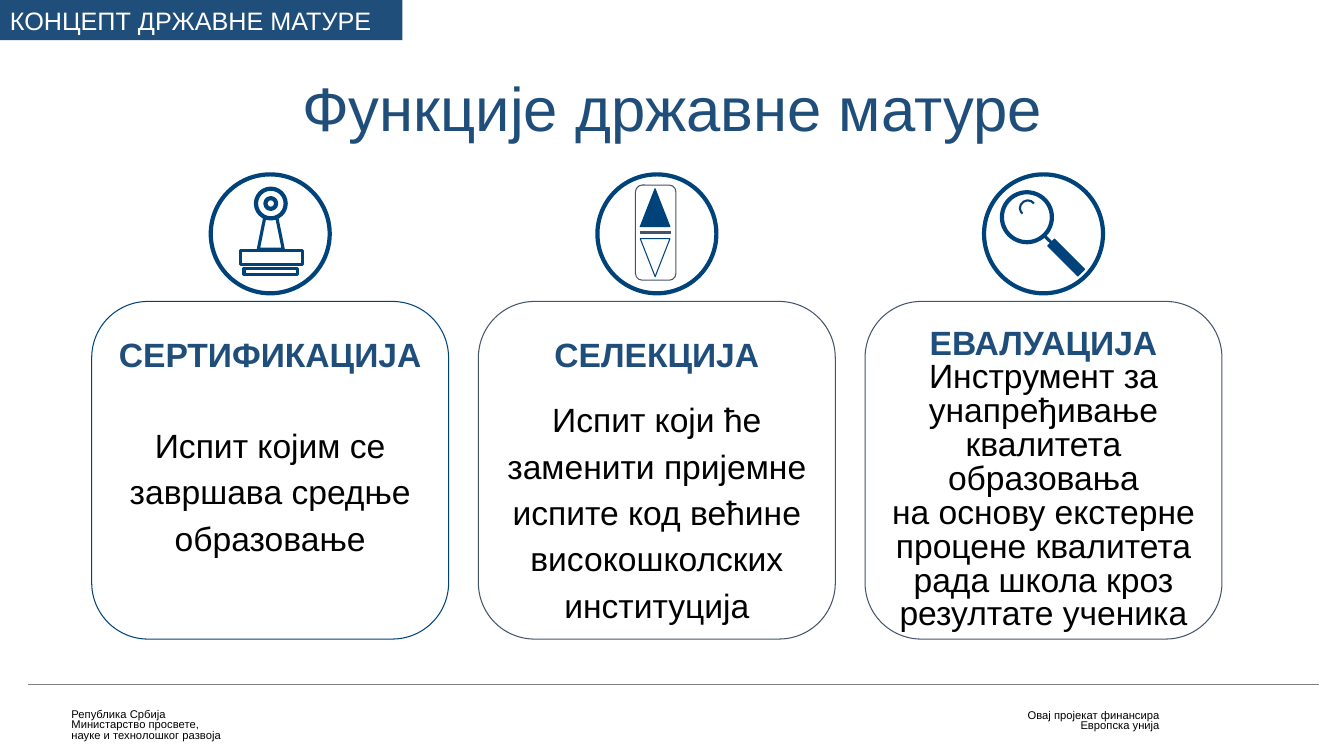
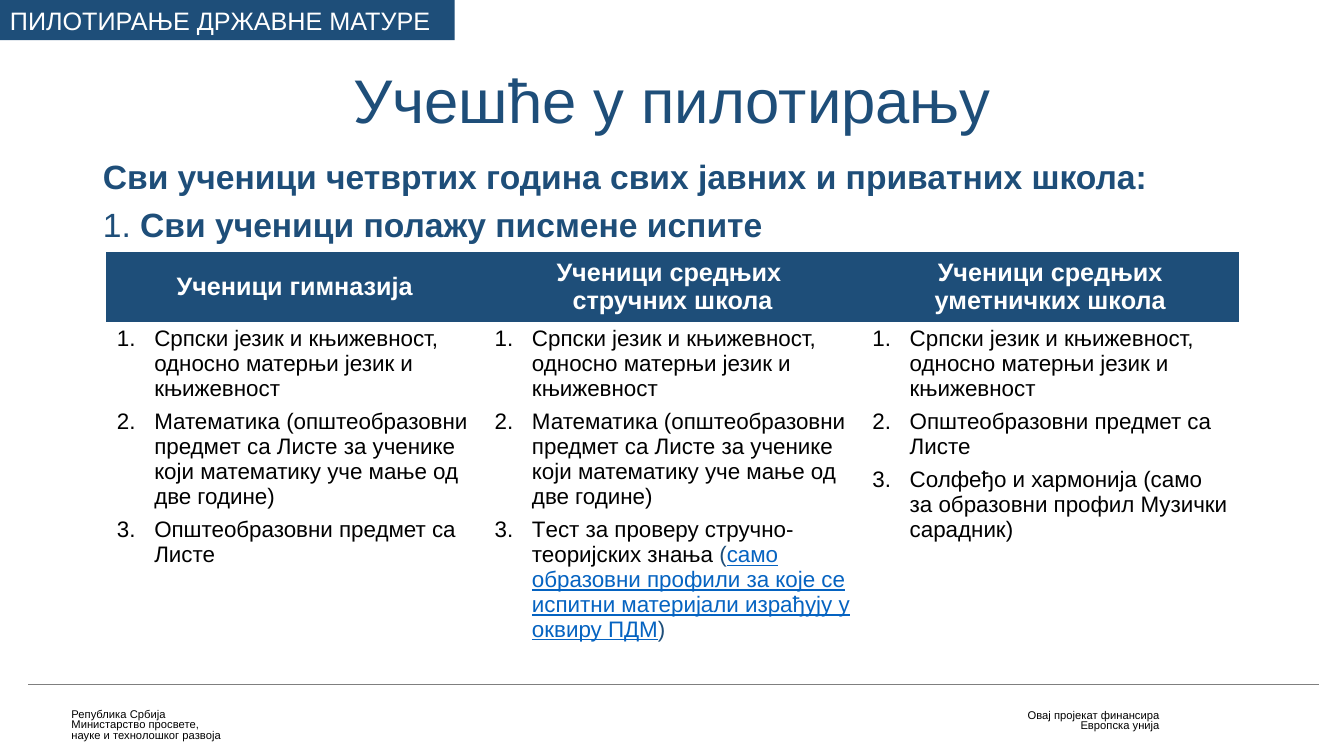
from pptx import Presentation
from pptx.dml.color import RGBColor
from pptx.enum.shapes import MSO_CONNECTOR, MSO_SHAPE
from pptx.enum.text import MSO_ANCHOR, MSO_AUTO_SIZE, PP_ALIGN
from pptx.oxml.ns import qn
from pptx.util import Inches, Pt
from lxml.etree import SubElement

# Shared style
NAVY = RGBColor(0x1E, 0x4E, 0x79)
ICON = RGBColor(0x00, 0x43, 0x7A)
SLATE = RGBColor(0x44, 0x54, 0x6A)
GRAY = RGBColor(0x7F, 0x7F, 0x7F)
LINK = RGBColor(0x05, 0x63, 0xC1)
BLACK = RGBColor(0, 0, 0)
WHITE = RGBColor(255, 255, 255)
FONT = "Arial"
NO_TABLE_STYLE = "{2D5ABB26-0587-4C30-8999-92F81FD0307C}"
TITLE_BOX = (0.92, 0.53, 11.5, 1.16)

# Grid of the three cards
CARD_X, CARD_Y, CARD_W, CARD_H, CARD_STEP = 0.91, 2.99, 3.54, 3.35, 3.835
ICON_Y, ICON_D = 1.73, 1.18


def place(sp, box):
    sp.left, sp.top, sp.width, sp.height = map(Inches, box)


def add_run(p, text, size, color=BLACK, bold=False, underline=False):
    r = p.add_run()
    r.text = text
    f = r.font
    f.name, f.size, f.bold = FONT, Pt(size), bold
    f.color.rgb = color
    if underline:
        f.underline = True


def next_par(tf, first, align=PP_ALIGN.LEFT, spacing=1.0, before=0):
    p = tf.paragraphs[0] if first else tf.add_paragraph()
    p.alignment, p.line_spacing, p.space_before = align, spacing, Pt(before)
    return p


def add_shape(shapes, kind, box, fill=None, line=None, width=0.75, rot=0):
    sp = shapes.add_shape(kind, *map(Inches, box))
    sp.shadow.inherit = False
    sp.rotation = rot
    if fill is None:
        sp.fill.background()
    else:
        sp.fill.solid()
        sp.fill.fore_color.rgb = fill
    if line is None:
        sp.line.fill.background()
    else:
        sp.line.color.rgb, sp.line.width = line, Pt(width)
    return sp


def add_line(shapes, start, end, color, width):
    ln = shapes.add_connector(MSO_CONNECTOR.STRAIGHT, *map(Inches, start + end))
    ln.line.color.rgb, ln.line.width = color, Pt(width)
    SubElement(ln.element.spPr, qn("a:effectLst"))
    return ln


# Master: title place, footer texts and rule
def footer_text(s, box, lines, align):
    sp = s.shapes.add_textbox(*map(Inches, box))
    sp.text_frame.word_wrap = True
    for i, text in enumerate(lines):
        add_run(next_par(sp.text_frame, i == 0, align, 0.8), text, 8)
    return sp


def build_master(prs, s):
    master = prs.slide_master
    for sp in list(master.placeholders)[2:]:
        sp.element.getparent().remove(sp.element)
    title = master.placeholders[0]
    place(title, TITLE_BOX)
    tree = title.element.getparent()
    parts = (
        footer_text(s, (10.09, 7, 1.51, 0.31),
                    ("Овај пројекат финансира", "Европска унија"), PP_ALIGN.RIGHT),
        footer_text(s, (0.61, 6.99, 1.69, 0.42),
                    ("Република Србија", "Министарство просвете,",
                     "науке и технолошког развоја"), PP_ALIGN.LEFT),
        add_line(s.shapes, (0.28, 6.79), (13.08, 6.79), GRAY, 1),
    )
    for i, sp in enumerate(parts, 20):
        sp.element.xpath(".//p:cNvPr")[0].set("id", str(i))
        tree.append(sp.element)


# Title and section tag of every slide
def heading(s, title, tag, tag_w, box=TITLE_BOX):
    sp = s.shapes.title
    place(sp, box)
    tf = sp.text_frame
    tf.auto_size, tf.vertical_anchor = MSO_AUTO_SIZE.NONE, MSO_ANCHOR.MIDDLE
    add_run(next_par(tf, True, PP_ALIGN.CENTER, 0.9), title, 44, NAVY)
    sp = add_shape(s.shapes, MSO_SHAPE.RECTANGLE, (0, 0, tag_w, 0.4), NAVY)
    sp.text_frame.vertical_anchor = MSO_ANCHOR.TOP
    add_run(next_par(sp.text_frame, True), tag, 18, WHITE)


# Icons: parts are given as shares of the circle's box
def scaled(x, y, shares):
    fx, fy, fw, fh = (v * ICON_D for v in shares)
    return x + fx, y + fy, fw, fh


def stamp(shapes, x, y):
    for kind, shares, fill, width in (
        (MSO_SHAPE.RECTANGLE, (0.25, 0.64, 0.52, 0.12), WHITE, 2.25),
        (MSO_SHAPE.RECTANGLE, (0.28, 0.79, 0.45, 0.05), WHITE, 2.25),
        (MSO_SHAPE.TRAPEZOID, (0.4, 0.37, 0.21, 0.26), WHITE, 2.25),
        (MSO_SHAPE.OVAL, (0.38, 0.12, 0.25, 0.25), None, 3),
        (MSO_SHAPE.OVAL, (0.46, 0.2, 0.09, 0.09), None, 3),
    ):
        add_shape(shapes, kind, scaled(x, y, shares), fill, ICON, width)


def compass(shapes, x, y):
    add_shape(shapes, MSO_SHAPE.ROUNDED_RECTANGLE,
              scaled(x, y, (0.32, 0.09, 0.34, 0.8)), WHITE, SLATE)
    for top, fill, rot in ((0.12, ICON, 0), (0.54, None, 180)):
        add_shape(shapes, MSO_SHAPE.ISOSCELES_TRIANGLE,
                  scaled(x, y, (0.36, top, 0.25, 0.32)), fill, ICON, rot=rot)
    left, mid, w, _ = scaled(x, y, (0.36, 0.49, 0.26, 0))
    add_line(shapes, (left, mid), (left + w, mid), SLATE, 2.25)


def magnifier(shapes, x, y):
    add_shape(shapes, MSO_SHAPE.OVAL, scaled(x, y, (0.15, 0.15, 0.42, 0.42)),
              None, ICON, 3)
    left, top, w, h = scaled(x, y, (0.5, 0.51, 0.32, 0.31))
    add_line(shapes, (left, top), (left + w, top + h), ICON, 2.25)
    add_shape(shapes, MSO_SHAPE.RECTANGLE, scaled(x, y, (0.51, 0.66, 0.36, 0.08)),
              ICON, ICON, rot=45)
    glint = add_shape(shapes, MSO_SHAPE.ARC, scaled(x, y, (0.3, 0.22, 0.13, 0.12)),
                      None, ICON, 1.5, 327.4)
    glint.adjustments[0], glint.adjustments[1] = 97.2, 0


# One card with its icon above
def card(s, x, name, lines, icon, line, spacing, gap):
    sp = add_shape(s.shapes, MSO_SHAPE.ROUNDED_RECTANGLE,
                   (x, CARD_Y, CARD_W, CARD_H), None, line)
    tf = sp.text_frame
    tf.vertical_anchor = MSO_ANCHOR.TOP
    tf.margin_top = tf.margin_bottom = Inches(0.1)
    add_run(next_par(tf, True, PP_ALIGN.CENTER, spacing), name, 24, NAVY, True)
    p = next_par(tf, False, PP_ALIGN.CENTER, spacing, gap)
    for i, text in enumerate(lines):
        if i:
            p.add_line_break()
        add_run(p, text, 24)
    shapes = s.shapes.add_group_shape().shapes
    x += (CARD_W - ICON_D) / 2
    add_shape(shapes, MSO_SHAPE.OVAL, (x, ICON_Y, ICON_D, ICON_D), None, ICON, 3)
    icon(shapes, x, ICON_Y)


def functions_slide(s):
    heading(s, "Функције државне матуре", "КОНЦЕПТ ДРЖАВНЕ МАТУРЕ", 3.99)
    cards = (
        ("СЕРТИФИКАЦИЈА", ["Испит којим се завршава средње образовање"],
         stamp, ICON, 1.15, 31.7),
        ("СЕЛЕКЦИЈА", ["Испит који ће заменити пријемне испите код већине "
                       "високошколских институција"], compass, SLATE, 1.15, 13.5),
        ("ЕВАЛУАЦИЈА", ["Инструмент за унапређивање квалитета образовања",
                        "на основу екстерне процене квалитета рада школа кроз "
                        "резултате ученика"], magnifier, SLATE, 0.84, 0),
    )
    for i, parts in enumerate(cards):
        card(s, CARD_X + i * CARD_STEP, *parts)


# Intro lines and table of exams
def intro(s, box):
    sp = s.placeholders[1]
    place(sp, box)
    tf = sp.text_frame
    tf.auto_size = MSO_AUTO_SIZE.NONE
    lines = (
        [("Сви ученици четвртих година свих јавних и приватних школа:", True)],
        [("1. ", False), ("Сви ученици полажу писмене испите", True)],
    )
    for i, runs in enumerate(lines):
        p = next_par(tf, i == 0, spacing=1.15, before=i)
        pPr = p._p.get_or_add_pPr()
        pPr.set("marL", "0")
        pPr.set("indent", "0")
        SubElement(pPr, qn("a:buNone"))
        for text, bold in runs:
            add_run(p, text, 24, NAVY, bold)


def numbered(p):
    p.space_after = Pt(6)
    pPr = p._p.get_or_add_pPr()
    pPr.set("marL", str(Inches(0.38)))
    pPr.set("indent", str(Inches(-0.37)))
    SubElement(SubElement(pPr, qn("a:buClr")), qn("a:srgbClr"), val=str(BLACK))
    SubElement(pPr, qn("a:buFont"), typeface=FONT)
    SubElement(pPr, qn("a:buAutoNum"), type="arabicPeriod")


def exam_table(s, box, columns):
    tbl_frame = s.shapes.add_table(2, len(columns), *map(Inches, box))
    tbl = tbl_frame.table
    tbl._tbl.tblPr.find(qn("a:tableStyleId")).text = NO_TABLE_STYLE
    tbl.rows[0].height, tbl.rows[1].height = Inches(0.69), Inches(box[3] - 0.69)
    for col, (head, items) in enumerate(columns):
        cell = tbl.cell(0, col)
        cell.fill.solid()
        cell.fill.fore_color.rgb = NAVY
        cell.vertical_anchor = MSO_ANCHOR.MIDDLE
        p = next_par(cell.text_frame, True, PP_ALIGN.CENTER)
        for i, text in enumerate(head):
            if i:
                p.add_line_break()
            add_run(p, text, 18, WHITE, True)
        cell = tbl.cell(1, col)
        cell.fill.background()
        for i, runs in enumerate(items):
            p = next_par(cell.text_frame, i == 0)
            numbered(p)
            for run in runs:
                add_run(p, run[0], 16, *run[1:])


def pilot_slide(s):
    heading(s, "Учешће у пилотирању", "ПИЛОТИРАЊЕ ДРЖАВНЕ МАТУРЕ", 4.51,
            (0.92, 0.54, 11.5, 0.98))
    intro(s, (0.92, 1.44, 11.77, 1.18))
    serbian = [("Српски језик и књижевност, односно матерњи језик и књижевност",)]
    maths = [("Математика (општеобразовни предмет са Листе за ученике који "
              "математику уче мање од две године)",)]
    general = [("Општеобразовни предмет са Листе",)]
    vocational = [
        ("Tест за проверу стручно-теоријских знањa ",), ("(", NAVY),
        ("само образовни профили за које се испитни материјали израђују у "
         "оквиру ПДМ", LINK, False, True), (")", NAVY)]
    music = [("Солфеђо и хармонија (само за образовни профил Музички сарадник)",)]
    exam_table(s, (1.05, 2.5, 11.24, 4.17), (
        (["Ученици гимназија"], (serbian, maths, general)),
        (["Ученици средњих ", "стручних школа"], (serbian, maths, vocational)),
        (["Ученици средњих уметничких школа"], (serbian, general, music)),
    ))


def main():
    prs = Presentation()
    prs.slide_width, prs.slide_height = Inches(13.33), Inches(7.5)
    s = prs.slides.add_slide(prs.slide_layouts.get_by_name("Title Only"))
    build_master(prs, s)
    functions_slide(s)
    pilot_slide(prs.slides.add_slide(prs.slide_layouts.get_by_name("Title and Content")))
    prs.save("out.pptx")


if __name__ == "__main__":
    main()
